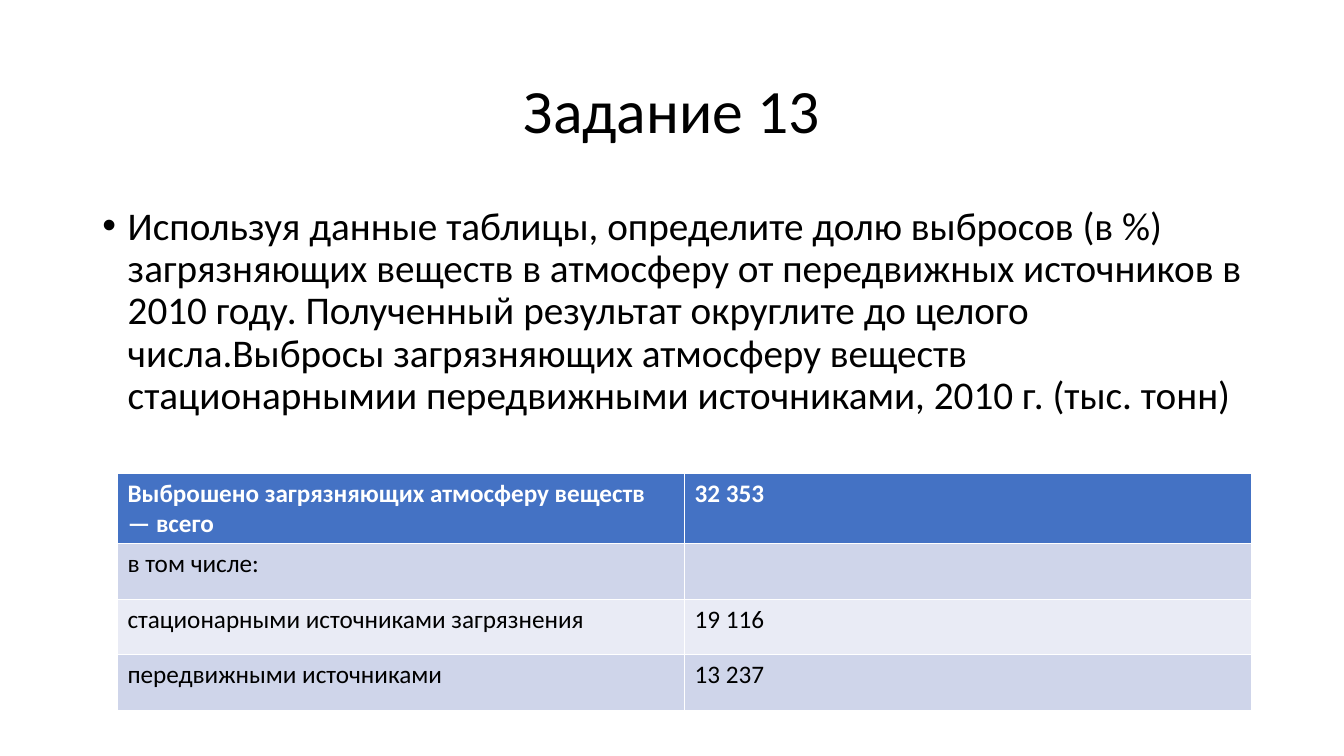
from lxml import etree
from pptx import Presentation
from pptx.dml.color import RGBColor
from pptx.enum import text
from pptx.oxml import ns
from pptx.util import Cm, Pt

FONT = "Calibri"
BLACK = RGBColor(0x00, 0x00, 0x00)
WHITE = RGBColor(0xFF, 0xFF, 0xFF)
HEADER_BLUE = RGBColor(0x44, 0x72, 0xC4)
BANDS = (RGBColor(0xE9, 0xEB, 0xF5), RGBColor(0xCF, 0xD5, 0xEA))

TASK = (
    "Используя данные таблицы, определите долю выбросов (в %) загрязняющих "
    "веществ в атмосферу от передвижных источников в 2010 году. Полученный "
    "результат округлите до целого числа.Выбросы загрязняющих атмосферу веществ "
    "стационарнымии передвижными источниками, 2010 г. (тыс. тонн)"
)
EMISSIONS = [
    ("Выброшено загрязняющих атмосферу веществ  — всего", "32 353"),
    ("в том числе:", ""),
    ("стационарными источниками загрязнения", "19 116"),
    ("передвижными источниками", "13 237"),
]


def add_run(p, words, size, color=BLACK, bold=False):
    r = p.add_run()
    r.text = words
    r.font.name = FONT
    r.font.size = Pt(size)
    r.font.bold = bold
    r.font.color.rgb = color


def set_title(s, words):
    title = s.shapes.title
    title.left, title.top = Cm(2.33), Cm(1.01)
    title.width, title.height = Cm(29.21), Cm(3.68)
    tf = title.text_frame
    tf.vertical_anchor = text.MSO_ANCHOR.MIDDLE
    p = tf.paragraphs[0]
    p.alignment = text.PP_ALIGN.CENTER
    p.line_spacing = 0.9
    add_run(p, words, 44)


def add_bullet_text(s, words):
    sp = s.shapes.add_textbox(Cm(2.33), Cm(5.07), Cm(29.21), Cm(12.09))
    tf = sp.text_frame
    tf.word_wrap = True
    p = tf.paragraphs[0]
    p.line_spacing = 0.9
    p.space_before = Pt(10)
    add_run(p, words, 28)
    # Hanging bullet
    pPr = p._p.get_or_add_pPr()
    pPr.set("marL", str(Cm(0.64)))
    pPr.set("indent", str(-Cm(0.64)))
    etree.SubElement(pPr, ns.qn("a:buFont")).set("typeface", "Arial")
    etree.SubElement(pPr, ns.qn("a:buChar")).set("char", "•")


def add_emissions_table(s, rows):
    row_height = Cm(1.4)
    frame = s.shapes.add_table(len(rows), 2, Cm(2.96), Cm(11.92),
                               Cm(28.58), row_height * len(rows))
    table = frame.table
    for i, row in enumerate(rows):
        table.rows[i].height = row_height
        header = i == 0
        for j, words in enumerate(row):
            cell = table.cell(i, j)
            cell.fill.solid()
            cell.fill.fore_color.rgb = HEADER_BLUE if header else BANDS[i % 2]
            if words:
                add_run(cell.text_frame.paragraphs[0], words, 18,
                        WHITE if header else BLACK, header)


def main():
    prs = Presentation()
    prs.slide_width, prs.slide_height = Cm(33.87), Cm(19.05)
    s = prs.slides.add_slide(prs.slide_layouts[5])

    # Heading and task
    set_title(s, "Задание 13")
    add_bullet_text(s, TASK)

    # Emissions by source
    add_emissions_table(s, EMISSIONS)

    prs.save("out.pptx")


if __name__ == "__main__":
    main()
